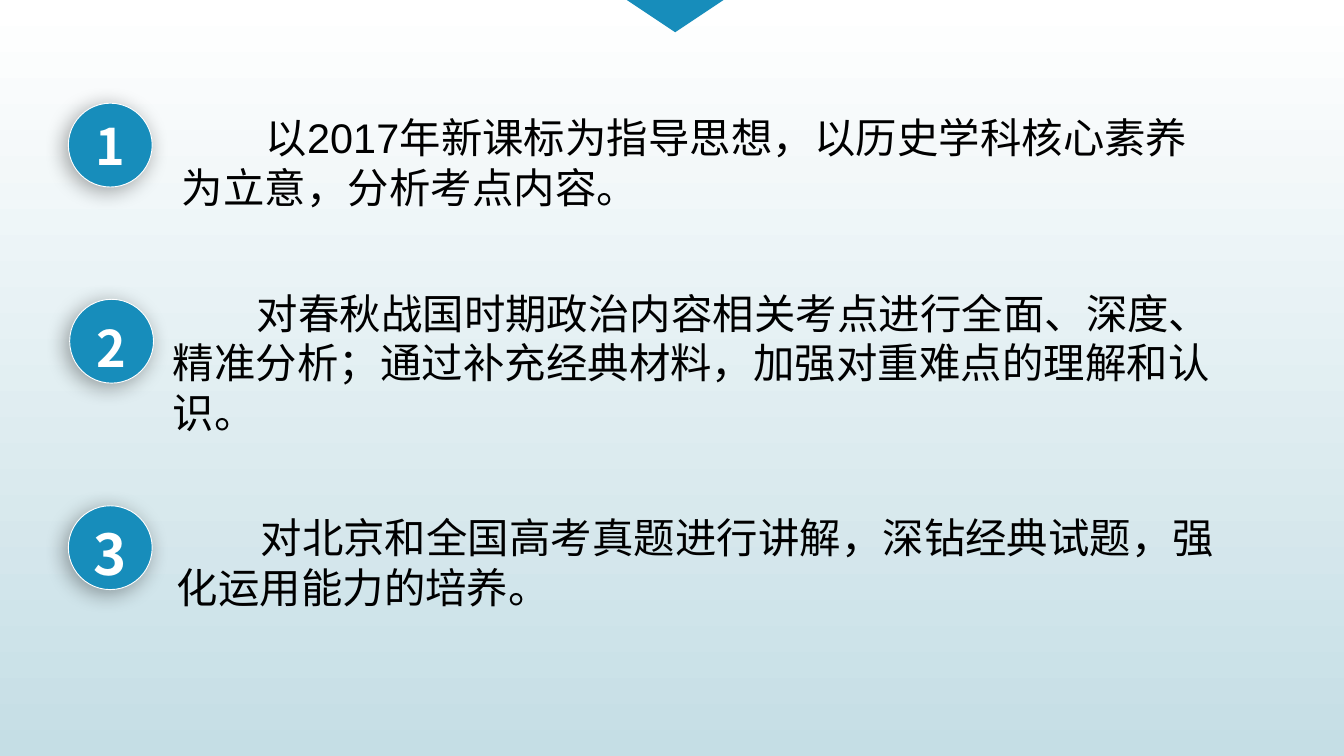
from lxml import etree
from pptx import Presentation
from pptx.dml.color import RGBColor
from pptx.enum.shapes import MSO_SHAPE
from pptx.enum.text import MSO_ANCHOR, MSO_AUTO_SIZE, PP_ALIGN
from pptx.oxml.ns import qn
from pptx.util import Inches, Pt

OVAL, TRIANGLE = MSO_SHAPE.OVAL, MSO_SHAPE.ISOSCELES_TRIANGLE
TOP, MIDDLE = MSO_ANCHOR.TOP, MSO_ANCHOR.MIDDLE
LEFT, CENTER = PP_ALIGN.LEFT, PP_ALIGN.CENTER
NO_AUTOFIT = MSO_AUTO_SIZE.NONE
COMPARISON_LAYOUT = 4

WIDTH, HEIGHT = 10.42, 5.86
BADGE, DISC = 0.65, 0.49
INDENT = 0.65
BLUE, WHITE, BLACK, PALE = "178DBB", "FFFFFF", "000000", "C5DEE5"

# digit, size, badge left and top, digit drop, text box, insets, text
POINTS = [
    ("1", 28.1, (0.53, 0.8), 0, (1.24, 0.79, 8.41, 0.95), (0.17, 0.08),
     "以2017年新课标为指导思想，以历史学科核心素养为立意，分析考点内容。"),
    ("2", 28.1, (0.54, 2.32), 0.05, (1.25, 2.19, 8.4, 1.26), (0.09, 0.04),
     "对春秋战国时期政治内容相关考点进行全面、深度、精准分析；"
     "通过补充经典材料，加强对重难点的理解和认识。"),
    ("3", 31.4, (0.53, 3.92), 0.04, (1.28, 3.93, 8.37, 0.87), (0.09, 0.04),
     "对北京和全国高考真题进行讲解，深钻经典试题，强化运用能力的培养。"),
]


def color(hex_string):
    return RGBColor.from_string(hex_string)


def apply(target, values):
    for name, value in values.items():
        setattr(target, name, value)


class Deck:
    def __init__(self):
        self.prs = Presentation()
        apply(self.prs, {"slide_width": Inches(WIDTH), "slide_height": Inches(HEIGHT)})
        self.s = self.prs.slides.add_slide(self.prs.slide_layouts[COMPARISON_LAYOUT])
        self.bodies = [ph for ph in self.s.placeholders if ph.placeholder_format.idx > 0]

    def background(self, start, end):
        fill = self.s.background.fill
        fill.gradient()
        fill.gradient_angle = 270
        for stop, position, value in zip(fill.gradient_stops, (0, 1), (start, end)):
            stop.position = position
            stop.color.rgb = color(value)

    def shape(self, kind, x, y, w, h, line=None):
        sp = self.s.shapes.add_shape(kind, Inches(x), Inches(y), Inches(w), Inches(h))
        sp.shadow.inherit = False
        sp.fill.solid()
        sp.fill.fore_color.rgb = color(BLUE)
        if line:
            sp.line.color.rgb = color(line)
            sp.line.width = Pt(0.5)
        else:
            sp.line.fill.background()
        return sp

    def cast_shadow(self, sp):
        effects = sp.element.spPr.find(qn("a:effectLst"))
        shadow = etree.SubElement(effects, qn("a:outerShdw"), blurRad=str(Pt(12)),
                                  dist=str(Pt(3)), dir="8100000", rotWithShape="0")
        tone = etree.SubElement(shadow, qn("a:srgbClr"), val=BLACK)
        etree.SubElement(tone, qn("a:alpha"), val="34000")

    def set_text(self, sp, text, tone, font, frame, paragraph, insets=(0, 0)):
        tf = sp.text_frame
        side, top = (Inches(v) for v in insets)
        apply(tf, {"margin_left": side, "margin_right": side, "margin_top": top,
                   "margin_bottom": top, "auto_size": NO_AUTOFIT, **frame})
        p = tf.paragraphs[0]
        apply(p, paragraph)
        r = p.add_run()
        r.text = text
        apply(r.font, font)
        r.font.color.rgb = color(tone)
        return p

    def badge(self, digit, size, x, y, drop):
        self.cast_shadow(self.shape(OVAL, x, y, BADGE, BADGE, WHITE))
        gap = (BADGE - DISC) / 2
        disc = self.shape(OVAL, x + gap, y + gap + drop, DISC, DISC)
        self.set_text(
            disc, digit, WHITE,
            {"name": "Noto Sans CJK SC", "size": Pt(size), "bold": True},
            {"word_wrap": False, "vertical_anchor": MIDDLE}, {"alignment": CENTER})

    def point(self, box, insets, text):
        sp = self.bodies.pop(0)
        apply(sp, dict(zip(("left", "top", "width", "height"), map(Inches, box))))
        p = self.set_text(
            sp, text, BLACK,
            {"name": "Arial", "size": Pt(23.1), "bold": False},
            {"word_wrap": True, "vertical_anchor": TOP},
            {"alignment": LEFT, "space_before": Pt(0)}, insets)
        pPr = p._p.get_or_add_pPr()
        pPr.set("marL", "0")
        pPr.set("indent", str(Inches(INDENT)))
        etree.SubElement(pPr, qn("a:buNone"))

    def remove_empty(self):
        for ph in list(self.s.placeholders):
            if not ph.text_frame.text:
                ph.element.getparent().remove(ph.element)


def main():
    deck = Deck()
    deck.background(WHITE, PALE)

    # Numbered points
    for digit, size, (x, y), drop, box, insets, text in POINTS:
        deck.badge(digit, size, x, y, drop)
        deck.point(box, insets, text)

    # Top marker
    marker = deck.shape(TRIANGLE, 4.86, 0, 0.75, 0.25)
    marker.rotation = 180

    deck.remove_empty()
    deck.prs.save("out.pptx")


if __name__ == "__main__":
    main()
